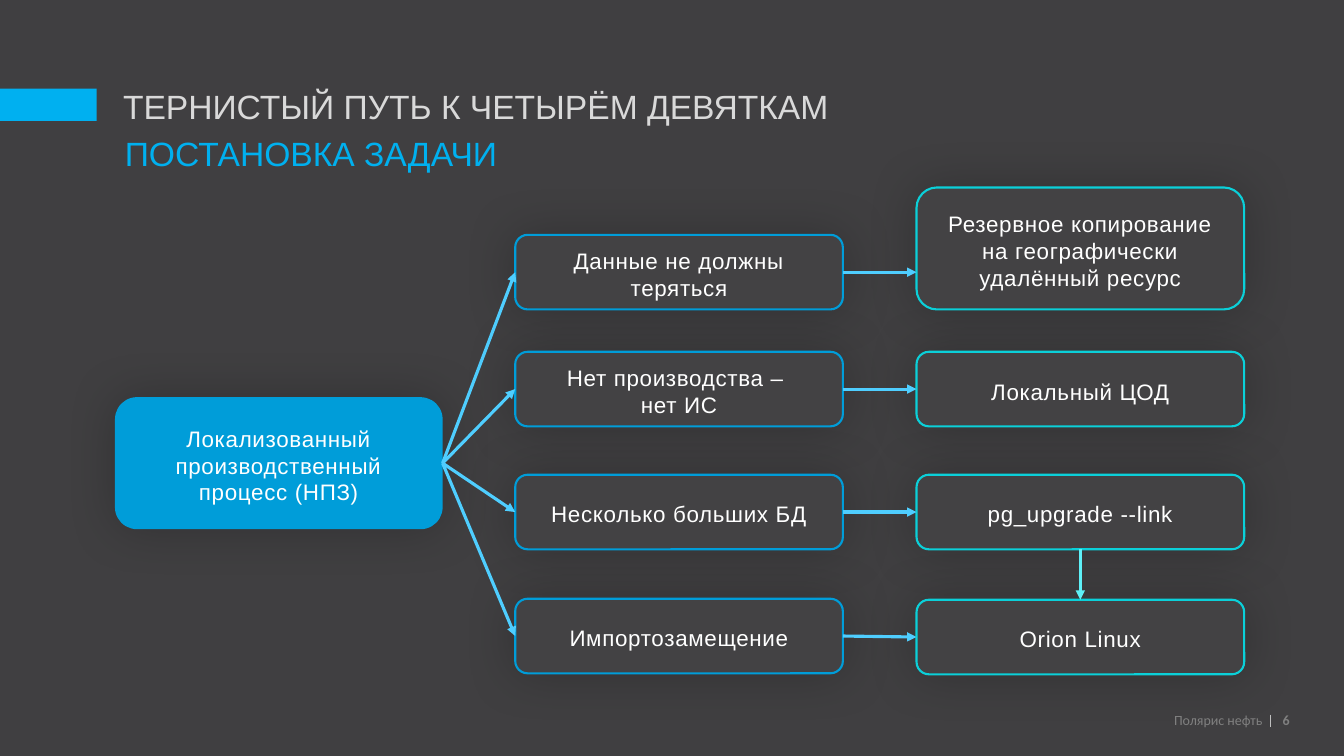
from lxml.etree import SubElement
from pptx import Presentation
from pptx.dml.color import RGBColor
from pptx.enum.shapes import MSO_CONNECTOR, MSO_SHAPE
from pptx.enum.text import MSO_ANCHOR as Anchor, MSO_AUTO_SIZE, PP_ALIGN as Align
from pptx.oxml import parse_xml
from pptx.oxml.ns import nsdecls, qn
from pptx.util import Inches, Pt

TITLE = "ТЕРНИСТЫЙ ПУТЬ К ЧЕТЫРЁМ ДЕВЯТКАМ"
SUBTITLE = "ПОСТАНОВКА ЗАДАЧИ"
PROCESS = "Локализованный производственный процесс (НПЗ)"
# requirement, solution, top of each box, height of the solution box
ROWS = [
    ("Данные не должны теряться", "Резервное копирование на географически удалённый ресурс",
     2.33, 1.86, 1.21),
    ("Нет производства – \vнет ИС", "Локальный ЦОД", 3.49, 3.49, 0.74),
    ("Несколько больших БД", "pg_upgrade --link", 4.71, 4.71, 0.74),
    ("Импортозамещение", "Orion Linux", 5.94, 5.95, 0.74),
]
FOOTER, PAGE_NUMBER = "Полярис нефть", "6"

COLORS = {
    "background": "403F41", "accent": "00B0F0", "title": "D9D9D9", "subtitle": "00B0EF",
    "process": "009DD9", "box": "434244", "solution": "0BD0D9", "arrow": "4FCEFF",
    "down arrow": "5EF0F7", "text": "FFFFFF", "footer": "808080", "divider": "BFBFBF",
}
PROCESS_X, REQUIREMENT_X, SOLUTION_X = 1.14, 5.11, 9.09
BOX_WIDTH, BOX_HEIGHT = 3.25, 0.74
TOP, LEFT, BOTTOM, RIGHT = range(4)


def color(name):
    return RGBColor.from_string(COLORS[name])


def write(shape, text, size, ink, font="Arial", align=Align.LEFT, anchor=Anchor.TOP,
          margins=(0.1, 0.05, 0.1, 0.05), wrap=True, bold=False, spacing=0):
    frame = shape.text_frame
    frame.auto_size = MSO_AUTO_SIZE.NONE
    frame.word_wrap = wrap
    frame.vertical_anchor = anchor
    (frame.margin_left, frame.margin_top,
     frame.margin_right, frame.margin_bottom) = map(Inches, margins)
    para = frame.paragraphs[0]
    para.text = text
    para.alignment = align
    for span in para.runs:
        span.font.size, span.font.name, span.font.bold = Pt(size), font, bold
        span.font.color.rgb = color(ink)
        if spacing:
            span.font._element.set("spc", str(int(spacing * 100)))


def add_text(slide, bounds, text, **style):
    write(slide.shapes.add_textbox(*map(Inches, bounds)), text, **style)


def add_box(slide, text, left, top, height=BOX_HEIGHT, fill="box", outline=None):
    """Add a rounded box with centred text and a soft glow-like shadow."""
    box = slide.shapes.add_shape(MSO_SHAPE.ROUNDED_RECTANGLE,
                                 *map(Inches, (left, top, BOX_WIDTH, height)))
    box.fill.solid()
    box.fill.fore_color.rgb = color(fill)
    if outline:
        box.line.color.rgb = color(outline)
        box.line.width = Pt(1.5)
    else:
        box.line.fill.background()
    box.shadow.inherit = False
    box._element.spPr.find(qn("a:effectLst")).append(parse_xml(
        f'<a:outerShdw {nsdecls("a")} blurRad="{Pt(36.6)}" dist="0" rotWithShape="0">'
        '<a:srgbClr val="000000"><a:alpha val="21000"/></a:srgbClr></a:outerShdw>'))
    write(box, text, size=16, ink="text", align=Align.CENTER, anchor=Anchor.MIDDLE,
          margins=(0.1, 0.16, 0.1, 0.12), spacing=0.5)
    return box


def add_line(slide, start, end, ink, width):
    line = slide.shapes.add_connector(MSO_CONNECTOR.STRAIGHT, *map(Inches, (*start, *end)))
    line.line.color.rgb = color(ink)
    line.line.width = Pt(width)
    SubElement(line._element.spPr, qn("a:effectLst"))
    return line


def add_arrow(slide, source, source_side, target, target_side, ink="arrow", end=(0, 0)):
    """Join two boxes; without a target side the arrow ends at the given point."""
    arrow = add_line(slide, (0, 0), end, ink, 2.25)
    arrow.begin_connect(source, source_side)
    if target_side is not None:
        arrow.end_connect(target, target_side)
    SubElement(arrow.line._get_or_add_ln(), qn("a:tailEnd"), type="triangle")


def main():
    deck = Presentation()
    deck.slide_width, deck.slide_height = Inches(13.33), Inches(7.5)
    slide = deck.slides.add_slide(deck.slide_layouts[5])
    slide.background.fill.solid()
    slide.background.fill.fore_color.rgb = color("background")

    accent = slide.shapes.add_shape(MSO_SHAPE.RECTANGLE, 0, *map(Inches, (0.88, 0.96, 0.32)))
    accent.fill.solid()
    accent.fill.fore_color.rgb = color("accent")
    accent.line.fill.background()
    accent.shadow.inherit = False

    title = slide.shapes.title
    title.left, title.top, title.width, title.height = map(Inches, (1.12, 0.8, 7.27, 0.5))
    write(title, TITLE, size=24, ink="title", wrap=False)
    add_text(slide, (1.14, 1.27, 6.67, 0.5), SUBTITLE, size=24, ink="subtitle")

    process = add_box(slide, PROCESS, PROCESS_X, 3.94, 1.31, fill="process")
    solutions = []
    for need, answer, need_top, answer_top, answer_height in ROWS:
        requirement = add_box(slide, need, REQUIREMENT_X, need_top, outline="process")
        solution = add_box(slide, answer, SOLUTION_X, answer_top, answer_height,
                           outline="solution")
        solutions.append(solution)
        add_arrow(slide, process, RIGHT, requirement, LEFT)
        # The taller box is met level with its row, below its own middle
        side = LEFT if answer_height == BOX_HEIGHT else None
        add_arrow(slide, requirement, RIGHT, solution, side,
                  end=(SOLUTION_X, need_top + BOX_HEIGHT / 2))
    add_arrow(slide, solutions[2], BOTTOM, solutions[3], TOP, ink="down arrow")

    small = dict(size=10, ink="footer", font="Calibri", margins=(0, 0, 0, 0))
    add_text(slide, (7.93, 7.05, 4.59, 0.18), FOOTER, align=Align.RIGHT,
             anchor=Anchor.MIDDLE, **small)
    add_line(slide, (12.6, 7.09), (12.6, 7.21), "divider", 0.5)
    add_text(slide, (12.72, 7.06, 0.31, 0.18), PAGE_NUMBER, bold=True, **small)
    deck.save("out.pptx")


if __name__ == "__main__":
    main()
